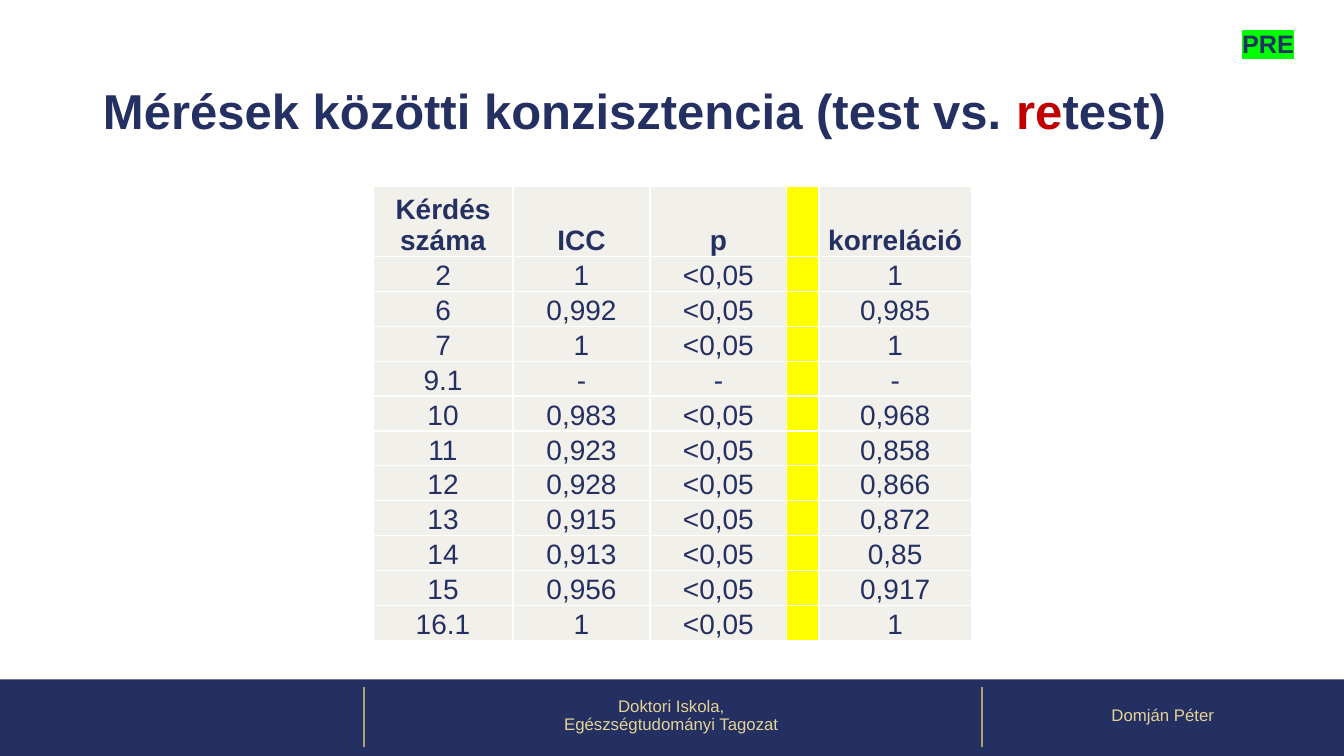
from lxml.etree import SubElement
from pptx import Presentation
from pptx.dml.color import RGBColor
from pptx.enum.shapes import MSO_CONNECTOR, MSO_SHAPE
from pptx.enum.text import MSO_ANCHOR, MSO_AUTO_SIZE, PP_ALIGN
from pptx.oxml import parse_xml
from pptx.oxml.ns import nsdecls, qn
from pptx.util import Cm, Pt

FONT = "Arial"
COLORS = {
    "navy": "242F62",
    "gold": "B3A16E",
    "sand": "E3D496",
    "red": "C00000",
    "cell": "F2F0EB",
    "yellow": "FFFF00",
    "green": "00FF00",
    "white": "FFFFFF",
}
HEADER = ["Kérdés\nszáma", "ICC", "p", "", "korreláció"]
COLUMN_WIDTHS = [3.53, 3.45, 3.45, 0.81, 3.84]
HEADER_HEIGHT, ROW_HEIGHT = 1.76, 0.88
# Question number, ICC, correlation
RESULTS = [
    ("2", "1", "1"),
    ("6", "0,992", "0,985"),
    ("7", "1", "1"),
    ("9.1", "-", "-"),
    ("10", "0,983", "0,968"),
    ("11", "0,923", "0,858"),
    ("12", "0,928", "0,866"),
    ("13", "0,915", "0,872"),
    ("14", "0,913", "0,85"),
    ("15", "0,956", "0,917"),
    ("16.1", "1", "1"),
]


def rgb(name):
    return RGBColor.from_string(COLORS[name])


def add_run(paragraph, text, size, color, bold=False):
    run = paragraph.add_run()
    run.text = text
    run.font.name = FONT
    run.font.size = Pt(size)
    run.font.bold = bold
    run.font.color.rgb = rgb(color)
    return run


def add_label(slide, box, lines, size, color, bold=False, wrap=True, spacing=None):
    frame = slide.shapes.add_textbox(*map(Cm, box)).text_frame
    frame.word_wrap = wrap
    frame.vertical_anchor = MSO_ANCHOR.MIDDLE
    for index, line in enumerate(lines):
        paragraph = frame.add_paragraph() if index else frame.paragraphs[0]
        paragraph.alignment = PP_ALIGN.CENTER
        paragraph.line_spacing = spacing
        add_run(paragraph, line, size, color, bold)
    return frame


def add_divider(slide, x):
    divider = slide.shapes.add_connector(
        MSO_CONNECTOR.STRAIGHT, Cm(x), Cm(17.32), Cm(x), Cm(18.82))
    divider.line.color.rgb = rgb("gold")
    divider.line.width = Pt(1.5)
    SubElement(divider._element.spPr, qn("a:effectLst"))


def add_footer(slide):
    band = slide.shapes.add_shape(
        MSO_SHAPE.RECTANGLE, 0, Cm(17.12), Cm(33.87), Cm(1.93))
    band.shadow.inherit = False
    band.fill.solid()
    band.fill.fore_color.rgb = rgb("navy")
    band.line.fill.background()
    for x in (9.17, 24.74):
        add_divider(slide, x)
    school = ["Doktori Iskola,", "Egészségtudományi Tagozat"]
    add_label(slide, (9.12, 17.04, 15.6, 2), school, 12, "sand", spacing=0.9)
    add_label(slide, (24.74, 17.04, 9.13, 2), ["Domján Péter"], 12, "sand", spacing=0.9)


def add_title(slide):
    title = slide.shapes.title
    title.left, title.top, title.width, title.height = map(Cm, (2.34, 1.02, 29.21, 3.68))
    frame = title.text_frame
    frame.word_wrap = True
    frame.auto_size = MSO_AUTO_SIZE.NONE
    frame.vertical_anchor = MSO_ANCHOR.MIDDLE
    heading = frame.paragraphs[0]
    heading.alignment = PP_ALIGN.LEFT
    heading.line_spacing = 0.9
    add_run(heading, "Mérések közötti konzisztencia (test vs. ", 35, "navy", True)
    add_run(heading, "re", 35, "red", True)
    add_run(heading, "test)", 35, "navy", True)


def set_borders(cell):
    properties = cell._tc.get_or_add_tcPr()
    for index, side in enumerate(("lnL", "lnR", "lnT", "lnB")):
        properties.insert(index, parse_xml(
            f'<a:{side} {nsdecls("a")} w="12700"><a:solidFill>'
            f'<a:srgbClr val="{COLORS["white"]}"/></a:solidFill></a:{side}>'))


def fill_cell(cell, text, bold):
    cell.fill.solid()
    cell.fill.fore_color.rgb = rgb("cell" if text else "yellow")
    set_borders(cell)
    cell.margin_left = cell.margin_right = cell.margin_top = Cm(0.02)
    cell.margin_bottom = 0
    cell.vertical_anchor = MSO_ANCHOR.BOTTOM
    if not text:
        return
    paragraph = cell.text_frame.paragraphs[0]
    paragraph.alignment = PP_ALIGN.CENTER
    for index, line in enumerate(text.split("\n")):
        if index:
            paragraph.add_line_break()
        add_run(paragraph, line, 20, "navy", bold)


def add_results(slide):
    rows = [HEADER]
    for question, icc, correlation in RESULTS:
        p_value = "-" if icc == "-" else "<0,05"
        rows.append([question, icc, p_value, "", correlation])
    height = HEADER_HEIGHT + ROW_HEIGHT * len(RESULTS)
    results = slide.shapes.add_table(
        len(rows), len(HEADER), Cm(9.4), Cm(4.7),
        Cm(sum(COLUMN_WIDTHS)), Cm(height)).table
    results.horz_banding = False
    for column, width in zip(results.columns, COLUMN_WIDTHS):
        column.width = Cm(width)
    for r, values in enumerate(rows):
        results.rows[r].height = Cm(ROW_HEIGHT if r else HEADER_HEIGHT)
        for c, value in enumerate(values):
            fill_cell(results.cell(r, c), value, bold=r == 0)


def add_stage_tag(slide):
    tag = add_label(slide, (31.04, 0.58, 1.83, 1.02), ["PRE"], 18, "navy", True, wrap=False)
    tag.auto_size = MSO_AUTO_SIZE.SHAPE_TO_FIT_TEXT
    # The highlight follows the text fill in the run properties
    text_fill = tag.paragraphs[0].runs[0]._r.rPr.find(qn("a:solidFill"))
    text_fill.addnext(parse_xml(
        f'<a:highlight {nsdecls("a")}><a:srgbClr val="{COLORS["green"]}"/></a:highlight>'))


def main():
    presentation = Presentation()
    presentation.slide_width, presentation.slide_height = Cm(33.87), Cm(19.05)
    slide = presentation.slides.add_slide(presentation.slide_layouts[5])
    add_footer(slide)
    add_title(slide)
    add_results(slide)
    add_stage_tag(slide)
    presentation.save("out.pptx")


if __name__ == "__main__":
    main()
